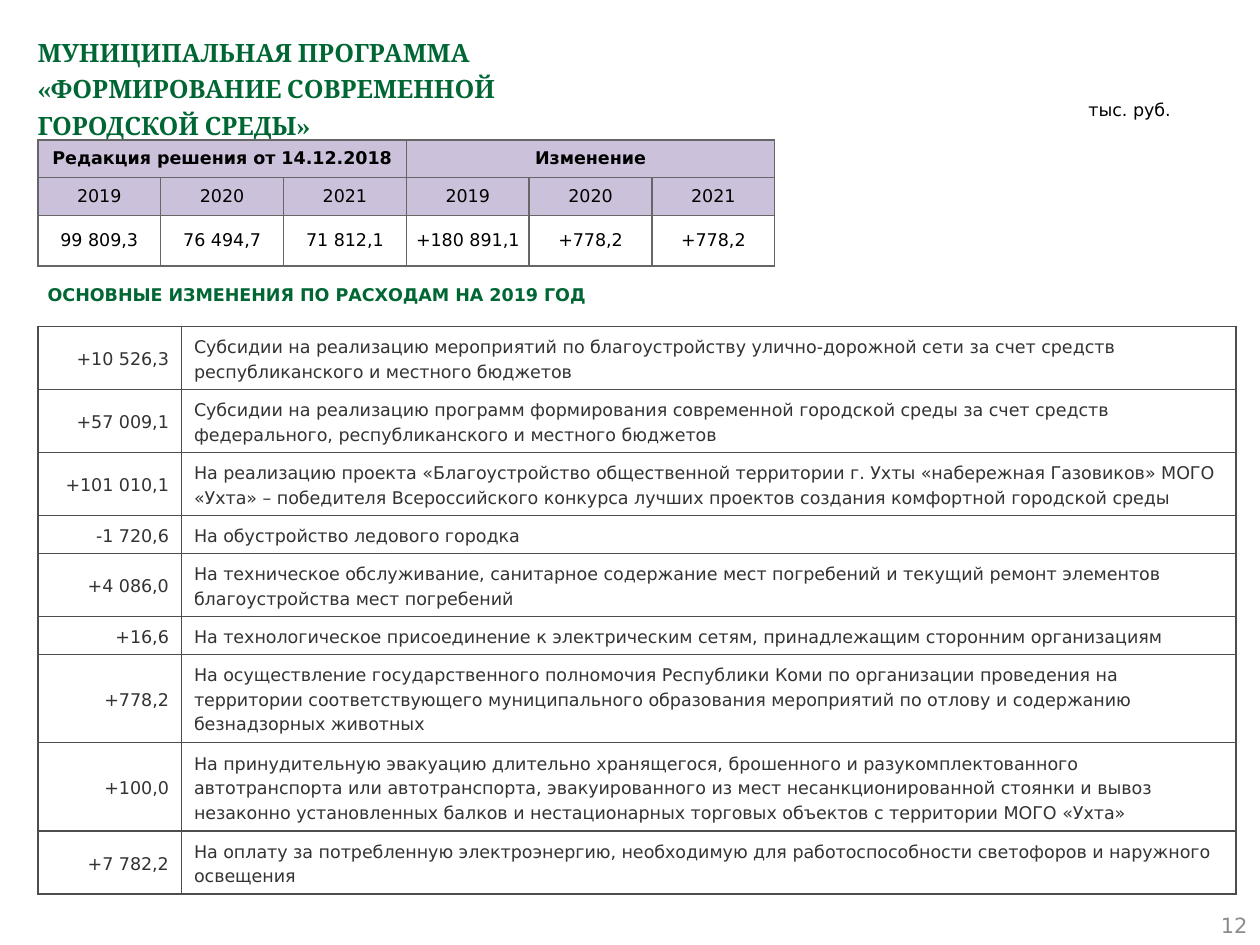
from lxml.etree import SubElement
from pptx import Presentation
from pptx.dml.color import RGBColor
from pptx.enum.shapes import MSO_SHAPE
from pptx.enum.text import MSO_ANCHOR, PP_ALIGN
from pptx.oxml.ns import qn
from pptx.util import Inches, Pt

COLOURS = {
    "green": "006633",
    "black": "000000",
    "body": "333333",
    "page": "8C8C8C",
    "lilac": "CCC1DA",
    "summary_border": "666666",
    "changes_border": "4D4D4D",
}
SUMMARY = [
    ["Редакция решения от 14.12.2018", "", "", "Изменение", "", ""],
    ["2019", "2020", "2021"] * 2,
    ["99 809,3", "76 494,7", "71 812,1", "+180 891,1", "+778,2", "+778,2"],
]
# Amount, purpose and the number of text lines the purpose takes.
CHANGES = [
    ("+10 526,3", "Субсидии на реализацию мероприятий по благоустройству улично-дорожной сети "
     "за счет средств республиканского и местного бюджетов", 2),
    ("+57 009,1", "Субсидии на реализацию программ формирования современной городской среды "
     "за счет средств федерального, республиканского и местного бюджетов", 2),
    ("+101 010,1", "На реализацию проекта «Благоустройство общественной территории г. Ухты "
     "«набережная Газовиков» МОГО «Ухта» – победителя Всероссийского конкурса лучших "
     "проектов создания комфортной городской среды", 2),
    ("-1 720,6", "На обустройство ледового городка", 1),
    ("+4 086,0", "На техническое обслуживание, санитарное содержание мест погребений "
     "и текущий ремонт элементов благоустройства мест погребений", 2),
    ("+16,6", "На технологическое присоединение к электрическим сетям, "
     "принадлежащим сторонним организациям", 1),
    ("+778,2", "На осуществление государственного полномочия Республики Коми по организации "
     "проведения на территории соответствующего муниципального образования мероприятий "
     "по отлову и содержанию безнадзорных животных", 3),
    ("+100,0", "На принудительную эвакуацию длительно хранящегося, брошенного "
     "и разукомплектованного автотранспорта или автотранспорта, эвакуированного из мест "
     "несанкционированной стоянки и вывоз незаконно установленных балков "
     "и нестационарных торговых объектов с территории МОГО «Ухта»", 3),
    ("+7 782,2", "На оплату за потребленную электроэнергию, необходимую для "
     "работоспособности светофоров и наружного освещения", 2),
]


def write(frame, text, colour, size=10, font="DejaVu Sans", bold=False,
          align=PP_ALIGN.LEFT, spacing=1.0):
    """Fill a text frame with one paragraph; a vertical tab breaks the line."""
    frame.text = text
    para = frame.paragraphs[0]
    para.alignment = align
    para.line_spacing = spacing
    values = {"size": Pt(size), "name": font, "bold": bold}
    for span in para.runs:
        for name, value in values.items():
            setattr(span.font, name, value)
        span.font.color.rgb = RGBColor.from_string(COLOURS[colour])


def add_text(page, area, text, colour, anchor=MSO_ANCHOR.TOP, **style):
    box = page.shapes.add_textbox(*map(Inches, area))
    box.text_frame.word_wrap = True
    box.text_frame.vertical_anchor = anchor
    write(box.text_frame, text, colour, **style)


def add_heading(page, area, text):
    shape = page.shapes.add_shape(MSO_SHAPE.PENTAGON, *map(Inches, area))
    shape.adjustments[0] = 0
    shape.shadow.inherit = False
    shape.fill.background()
    shape.line.fill.background()
    shape.text_frame.vertical_anchor = MSO_ANCHOR.MIDDLE
    write(shape.text_frame, text, "green", bold=True)


def add_grid(page, left, top, widths, heights):
    """Add a table without banding, sized by its columns and rows."""
    lengths = map(Inches, (left, top, sum(widths), sum(heights)))
    table = page.shapes.add_table(len(heights), len(widths), *lengths).table
    table.first_row = table.horz_banding = False
    for column, width in zip(table.columns, widths):
        column.width = Inches(width)
    for row, height in zip(table.rows, heights):
        row.height = Inches(height)
    return table


def format_cell(cell, border, fill=None, inset=None):
    cell.vertical_anchor = MSO_ANCHOR.MIDDLE
    if inset is not None:
        for side in ("left", "right", "top", "bottom"):
            setattr(cell, f"margin_{side}", Inches(inset))
    properties = cell._tc.get_or_add_tcPr()
    for edge in ("lnL", "lnR", "lnT", "lnB"):
        line = SubElement(properties, qn(f"a:{edge}"), w=str(Pt(1)))
        solid = SubElement(line, qn("a:solidFill"))
        SubElement(solid, qn("a:srgbClr"), val=COLOURS[border])
    if fill:
        cell.fill.solid()
        cell.fill.fore_color.rgb = RGBColor.from_string(COLOURS[fill])
    else:
        cell.fill.background()


def add_summary(page):
    table = add_grid(page, 0.3, 1.11, [0.975] * 6, [0.3, 0.3, 0.4])
    for row, texts in enumerate(SUMMARY):
        for column, text in enumerate(texts):
            cell = table.cell(row, column)
            format_cell(cell, "summary_border", "lilac" if row < 2 else None, 0.05)
            write(cell.text_frame, text, "black", bold=row == 0, align=PP_ALIGN.CENTER)
    for first in (0, 3):
        table.cell(0, first).merge(table.cell(0, first + 2))


def add_changes(page):
    heights = [0.1 + 0.19 * lines for *_, lines in CHANGES]
    table = add_grid(page, 0.3, 2.59, [1.14, 8.37], heights)
    aligns = (PP_ALIGN.RIGHT, PP_ALIGN.LEFT)
    for row, (amount, purpose, _) in enumerate(CHANGES):
        for column, text in enumerate((amount, purpose)):
            cell = table.cell(row, column)
            format_cell(cell, "changes_border")
            write(cell.text_frame, text, "body", align=aligns[column], spacing=1.2)


def main():
    deck = Presentation()
    deck.slide_width, deck.slide_height = Inches(10), Inches(7.5)
    page = deck.slides.add_slide(deck.slide_layouts[6])
    add_text(page, (0.2, 0.2, 9.61, 0.79),
             "МУНИЦИПАЛЬНАЯ ПРОГРАММА\v«ФОРМИРОВАНИЕ СОВРЕМЕННОЙ\vГОРОДСКОЙ СРЕДЫ»",
             "green", size=14.4, font="Cambria", bold=True, spacing=1.2)
    add_text(page, (7.67, 7.14, 2.33, 0.4), "12", "page", MSO_ANCHOR.MIDDLE,
             size=12, align=PP_ALIGN.RIGHT)
    add_heading(page, (0.28, 2.12, 5.32, 0.43),
                "ОСНОВНЫЕ ИЗМЕНЕНИЯ ПО РАСХОДАМ НА 2019 ГОД")
    add_changes(page)
    add_text(page, (8.54, 0.7, 1.01, 0.3), "тыс. руб.", "black", spacing=1.2)
    add_summary(page)
    deck.save("out.pptx")


if __name__ == "__main__":
    main()
